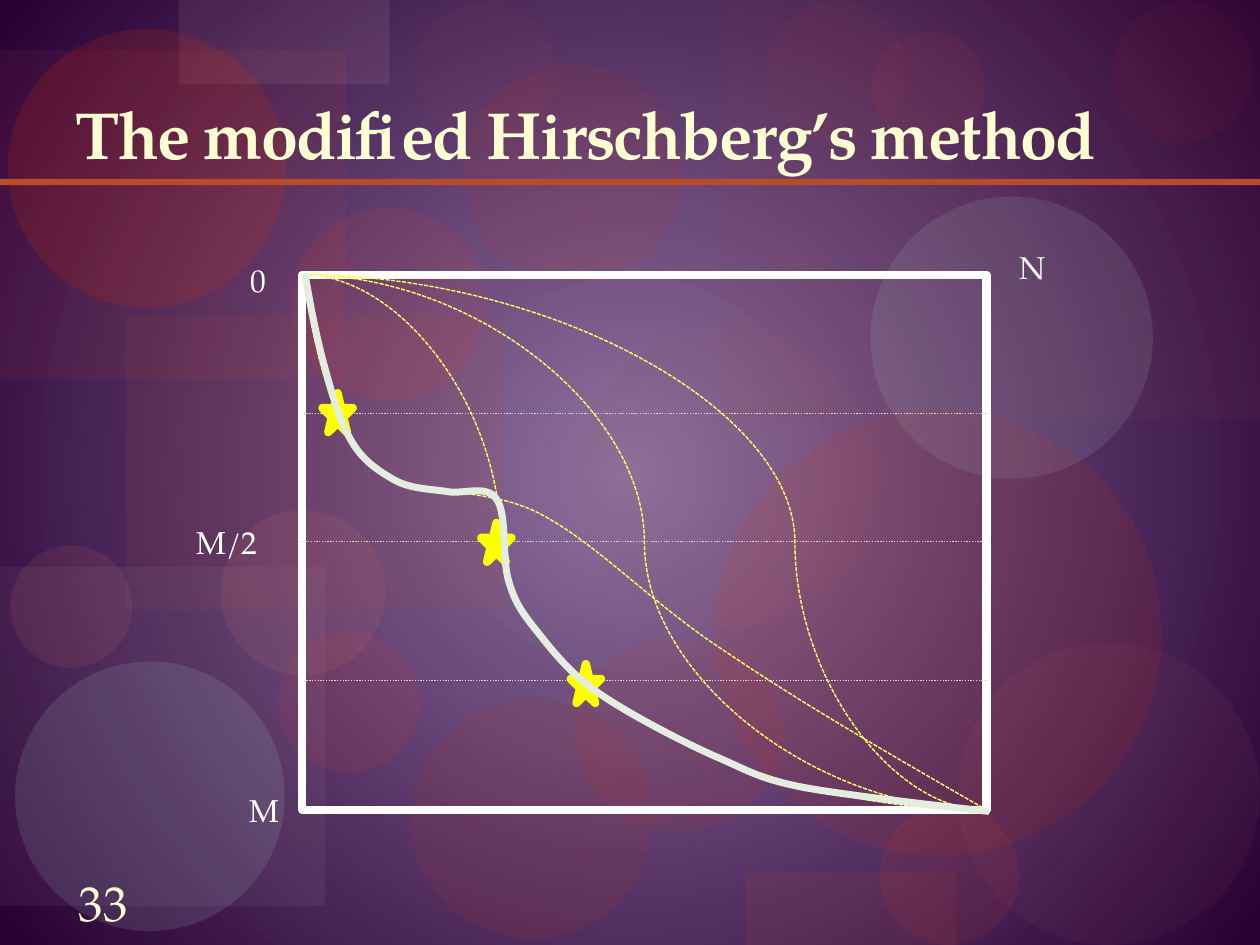
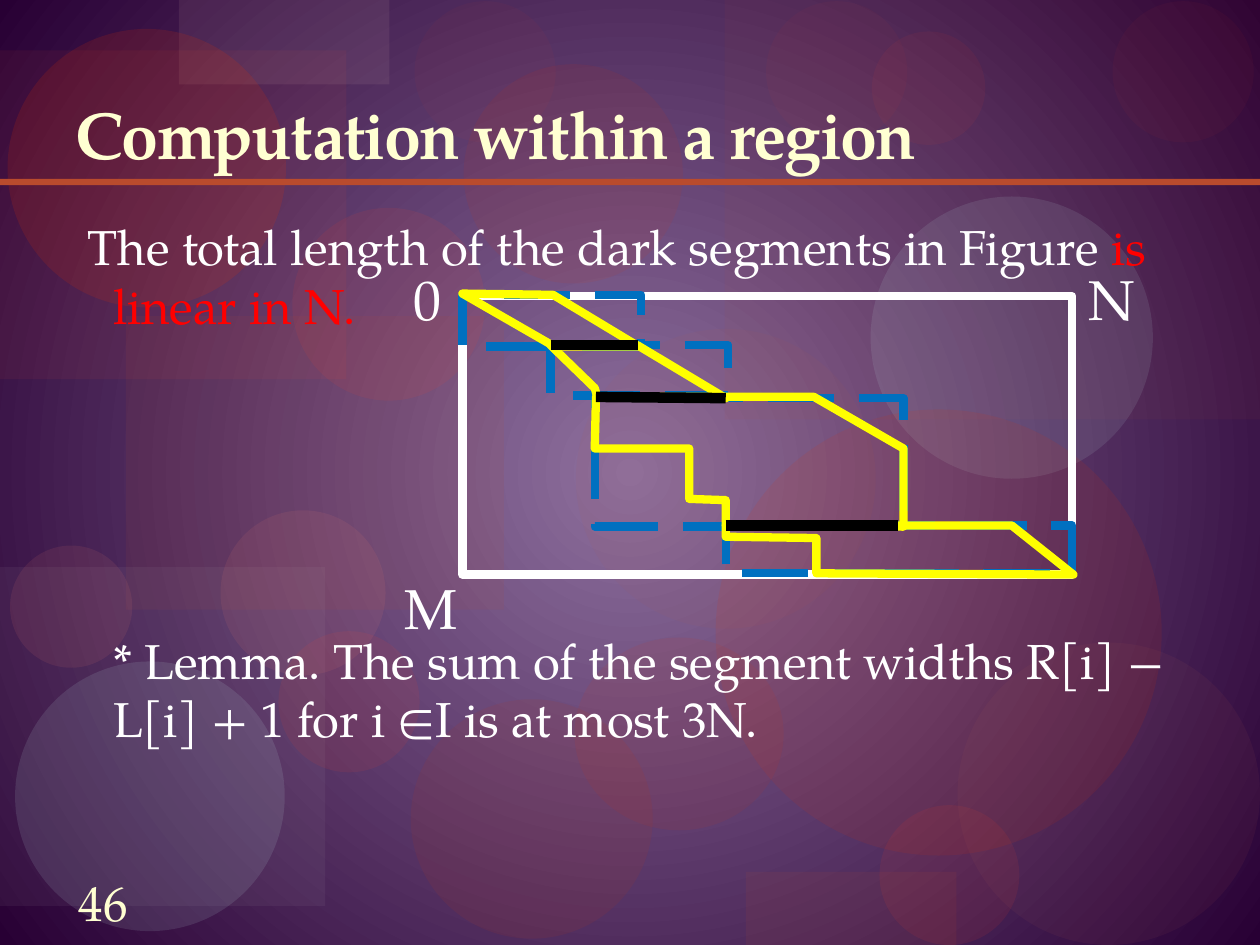
from dataclasses import dataclass
from typing import NamedTuple

from lxml.etree import SubElement
from pptx import Presentation
from pptx.dml.color import RGBColor
from pptx.enum.dml import MSO_LINE
from pptx.enum.shapes import MSO_CONNECTOR, MSO_SHAPE, PP_PLACEHOLDER
from pptx.enum.text import MSO_ANCHOR, MSO_AUTO_SIZE, PP_ALIGN
from pptx.oxml.ns import qn
from pptx.util import Emu, Pt

EMU_PER_PX = 9144


@dataclass(frozen=True)
class Theme:
    font: str = "TeX Gyre Pagella"
    glow: str = "8E709E"
    night: str = "280034"
    cream: str = "FFFFD2"
    white: str = "FFFFFF"
    rust: str = "B94B2D"
    red: str = "FF0000"
    yellow: str = "FFFF00"
    pale_yellow: str = "FFFF5E"
    grey: str = "D9D9D9"
    mint: str = "E4EEE0"
    blue: str = "0070C0"
    black: str = "000000"
    title_size: int = 38
    body_size: int = 28
    axis_size: int = 32
    small_size: int = 18


THEME = Theme()


class Box(NamedTuple):
    left: int
    top: int
    width: int
    height: int


class Pen(NamedTuple):
    color: str
    width: float
    dash: object = None


class Decor(NamedTuple):
    box: Box
    color: str
    opacity: int
    kind: object = MSO_SHAPE.OVAL


class Label(NamedTuple):
    text: str
    left: int
    top: int
    size: int


class Run(NamedTuple):
    text: str
    color: str


RECT = MSO_SHAPE.RECTANGLE
DECOR = [
    Decor(Box(100, 251, 300, 233), THEME.rust, 9, RECT),
    Decor(Box(326, 555, 192, 190), "AA3826", 13),
    Decor(Box(575, 0, 425, 333), THEME.rust, 6, RECT),
    Decor(Box(0, 450, 258, 269), "B1ACB4", 8, RECT),
    Decor(Box(457, 261, 238, 238), "AF5D53", 8),
    Decor(Box(698, 639, 111, 111), "FF4427", 9),
    Decor(Box(691, 156, 224, 224), "C1E8E4", 11),
    Decor(Box(12, 525, 214, 214), "C1E8E4", 12),
    Decor(Box(221, 501, 112, 112), "FF4427", 9),
    Decor(Box(456, 506, 166, 153), "E63100", 8),
    Decor(Box(0, 40, 275, 261), "F04F36", 7, RECT),
    Decor(Box(142, 0, 167, 67), "D9B2AD", 10, RECT),
    Decor(Box(6, 23, 221, 221), "E63100", 15),
    Decor(Box(8, 433, 97, 97), "ED7E70", 10),
    Decor(Box(232, 165, 153, 153), "FF4427", 9),
    Decor(Box(368, 51, 174, 174), "E63100", 8),
    Decor(Box(568, 325, 354, 354), "E63100", 10),
    Decor(Box(608, 1, 112, 112), "FF4427", 4),
    Decor(Box(760, 510, 240, 240), "AF5D53", 8),
    Decor(Box(175, 405, 131, 131), "ED7E70", 10),
    Decor(Box(692, 25, 90, 90), "FF4427", 6),
    Decor(Box(883, 1, 112, 112), "FF4427", 4),
    Decor(Box(592, 692, 167, 58), THEME.rust, 10, RECT),
    Decor(Box(329, 1, 112, 112), "FF4427", 4),
    Decor(Box(0, 142, 1000, 5), THEME.rust, 100, RECT),
]

FRAME = Pen(THEME.white, 4.72)
GRID = Pen(THEME.grey, 0.79, MSO_LINE.ROUND_DOT)
CANDIDATE = Pen(THEME.pale_yellow, 0.79, MSO_LINE.SQUARE_DOT)
BEST = Pen(THEME.mint, 4)
REGION = Pen(THEME.yellow, 4.72)
BOUND = Pen(THEME.blue, 4.72, MSO_LINE.LONG_DASH)
SEGMENT = Pen(THEME.black, 6)


def px(length: int) -> Emu:
    return Emu(length * EMU_PER_PX)


def place(box: Box) -> list[Emu]:
    return [px(length) for length in box]


def stroke(line, pen: Pen) -> None:
    line.color.rgb = RGBColor.from_string(pen.color)
    line.width = Pt(pen.width)
    if pen.dash is not None:
        line.dash_style = pen.dash


def outline(shape, pen: Pen) -> None:
    stroke(shape.line, pen)
    SubElement(shape.element.spPr.find(qn("a:ln")), qn("a:round"))


def add_preset(slide, kind, box: Box, fill: str | None = None, pen: Pen | None = None):
    shape = slide.shapes.add_shape(kind, *place(box))
    shape.shadow.inherit = False
    if fill:
        shape.fill.solid()
        shape.fill.fore_color.rgb = RGBColor.from_string(fill)
    else:
        shape.fill.background()
    if pen:
        outline(shape, pen)
    else:
        shape.line.fill.background()
    return shape


def add_link(slide, start: tuple, end: tuple, pen: Pen, bend: float | None = None) -> None:
    kind = MSO_CONNECTOR.STRAIGHT if bend is None else MSO_CONNECTOR.CURVE
    link = slide.shapes.add_connector(kind, *map(px, start + end))
    stroke(link.line, pen)
    properties = link.element.spPr
    if bend is not None:
        adjustments = properties.find(".//" + qn("a:avLst"))
        SubElement(adjustments, qn("a:gd"), name="adj1", fmla=f"val {round(bend * 100000)}")
    SubElement(properties, qn("a:effectLst"))


def add_outline(slide, points: list[tuple], pen: Pen, close: bool = True):
    builder = slide.shapes.build_freeform(*points[0], scale=float(EMU_PER_PX))
    builder.add_line_segments(points[1:], close=close)
    shape = builder.convert_to_shape()
    shape.shadow.inherit = False
    shape.fill.background()
    outline(shape, pen)
    return shape


def add_curve(slide, points: list[tuple], pen: Pen) -> None:
    curve = add_outline(slide, points, pen, close=False)
    route = curve.element.find(".//" + qn("a:path"))
    steps = route.findall(qn("a:lnTo"))
    for first in range(0, len(steps), 3):
        bezier = SubElement(route, qn("a:cubicBezTo"))
        for step in steps[first:first + 3]:
            bezier.append(step[0])
            route.remove(step)


def add_run(paragraph, text: str, size: int, color: str, bold: bool = False):
    run = paragraph.add_run()
    run.text = text
    run.font.name = THEME.font
    run.font.size = Pt(size)
    run.font.bold = bold
    run.font.color.rgb = RGBColor.from_string(color)
    return run


def add_text_frame(slide, box: Box):
    frame = slide.shapes.add_textbox(*place(box)).text_frame
    frame.word_wrap = True
    return frame


def add_label(slide, label: Label) -> None:
    frame = add_text_frame(slide, Box(label.left, label.top, 80, 40))
    add_run(frame.paragraphs[0], label.text, label.size, THEME.white)


def add_body_paragraph(paragraph, runs: list[Run], indent: int, space_before: int) -> None:
    paragraph.space_before = Pt(space_before)
    properties = paragraph._p.get_or_add_pPr()
    properties.set("marL", str(px(30)))
    properties.set("indent", str(px(indent)))
    for run in runs:
        add_run(paragraph, run.text, THEME.body_size, run.color)


def style_layout(layout) -> None:
    for placeholder in list(layout.placeholders):
        if placeholder.placeholder_format.type != PP_PLACEHOLDER.TITLE:
            placeholder.element.getparent().remove(placeholder.element)
    fill = layout.background.fill
    fill.gradient()
    for stop, color in zip(fill.gradient_stops, (THEME.glow, THEME.night)):
        stop.color.rgb = RGBColor.from_string(color)
    gradient = layout.element.find(".//" + qn("a:gradFill"))
    gradient.remove(gradient.find(qn("a:lin")))
    radial = SubElement(gradient, qn("a:path"), path="circle")
    SubElement(radial, qn("a:fillToRect"), {side: "50000" for side in "ltrb"})


def decorate_layout(layout, slide) -> None:
    shapes = []
    for item in DECOR:
        shape = add_preset(slide, item.kind, item.box, item.color)
        color = shape.element.spPr.find(qn("a:solidFill"))[0]
        SubElement(color, qn("a:alpha"), val=str(item.opacity * 1000))
        shapes.append(shape)
    for shape in shapes:
        layout.placeholders[0].element.addprevious(shape.element)


def start_slide(deck, layout, heading: str, number: str):
    slide = deck.slides.add_slide(layout)
    title = slide.shapes.title
    title.left, title.top, title.width, title.height = place(Box(50, 17, 900, 125))
    frame = title.text_frame
    frame.auto_size = MSO_AUTO_SIZE.NONE
    frame.vertical_anchor = MSO_ANCHOR.BOTTOM
    frame.paragraphs[0].alignment = PP_ALIGN.LEFT
    run = add_run(frame.paragraphs[0], heading, THEME.title_size, THEME.cream, bold=True)
    run._r.get_or_add_rPr().set("spc", "-100")

    footer = add_text_frame(slide, Box(17, 691, 130, 50))
    footer.margin_left = footer.margin_right = footer.margin_top = footer.margin_bottom = 0
    footer.vertical_anchor = MSO_ANCHOR.MIDDLE
    footer.paragraphs[0].alignment = PP_ALIGN.CENTER
    add_run(footer.paragraphs[0], number, THEME.body_size, THEME.cream)
    return slide


def draw_method(slide) -> None:
    add_preset(slide, RECT, Box(240, 218, 543, 425), pen=FRAME)
    for text, left, top in (("0", 189, 202), ("M", 188, 623), ("N", 799, 192), ("M/2", 146, 410)):
        add_label(slide, Label(text, left, top, THEME.small_size))
    for left, y in ((240, 430), (241, 328), (241, 540)):
        add_link(slide, (left, y), (left + 543, y), GRID)
    for bend in (0.72, 0.29, 0.5):
        add_link(slide, (240, 218), (783, 643), CANDIDATE, bend)
    add_curve(slide, [(240, 218), (250, 276), (261, 334), (292, 366), (324, 398), (381, 383),
                      (429, 408), (476, 433), (517, 479), (577, 518), (636, 558), (710, 601),
                      (785, 644)], CANDIDATE)
    for left, top in ((382, 415), (256, 312), (453, 527)):
        add_preset(slide, MSO_SHAPE.STAR_5_POINT, Box(left, top, 24, 31), THEME.yellow, REGION)
    add_curve(slide, [(242, 217), (246, 240), (250, 262), (256, 285), (262, 307), (269, 334),
                      (279, 350), (288, 366), (301, 374), (313, 381), (326, 388), (340, 388),
                      (354, 390), (367, 393), (386, 384), (394, 396), (403, 408), (398, 444),
                      (404, 462), (409, 479), (415, 487), (427, 502), (439, 517), (452, 534),
                      (475, 550), (498, 566), (540, 588), (567, 600), (595, 612), (602, 618),
                      (638, 625), (675, 632), (785, 644), (785, 644)], BEST)


def draw_region(slide) -> None:
    body = add_text_frame(slide, Box(50, 167, 900, 500))
    add_body_paragraph(body.paragraphs[0], [
        Run("The total length of the dark segments in Figure ", THEME.white),
        Run("is linear in N.", THEME.red)], -20, 7)
    add_body_paragraph(body.add_paragraph(), [
        Run("* Lemma. The sum of the segment widths R[i] − L[i] + 1 for i ∈I is at most 3N.",
            THEME.white)], 0, 169)

    add_preset(slide, RECT, Box(367, 235, 484, 221), pen=FRAME)
    for text, left, top in (("0", 318, 205), ("N", 854, 205), ("M", 311, 450)):
        add_label(slide, Label(text, left, top, THEME.axis_size))
    for bound in (Box(437, 274, 141, 40), Box(472, 316, 245, 102),
                  Box(367, 234, 142, 41), Box(576, 417, 275, 38)):
        add_preset(slide, RECT, bound, pen=BOUND)
    for region in (
        [(367, 233), (439, 234), (507, 275), (440, 275)],
        [(437, 274), (472, 308), (474, 315), (576, 316), (506, 274)],
        [(473, 315), (472, 356), (547, 356), (547, 396), (576, 397), (576, 417),
         (717, 418), (717, 356), (646, 315)],
        [(576, 417), (576, 426), (648, 427), (648, 455), (852, 456), (803, 417)],
    ):
        add_outline(slide, region, REGION)
    for start, end in (((437, 274), (506, 274)), ((473, 315), (576, 316)), ((576, 417), (713, 417))):
        add_link(slide, start, end, SEGMENT)


def main() -> None:
    deck = Presentation()
    deck.slide_width, deck.slide_height = px(1000), px(750)
    layout = deck.slide_layouts[5]
    style_layout(layout)
    method = start_slide(deck, layout, "The modified Hirschberg’s method", "33")
    decorate_layout(layout, method)
    draw_method(method)
    draw_region(start_slide(deck, layout, "Computation within a region", "46"))
    deck.save("out.pptx")


if __name__ == "__main__":
    main()
